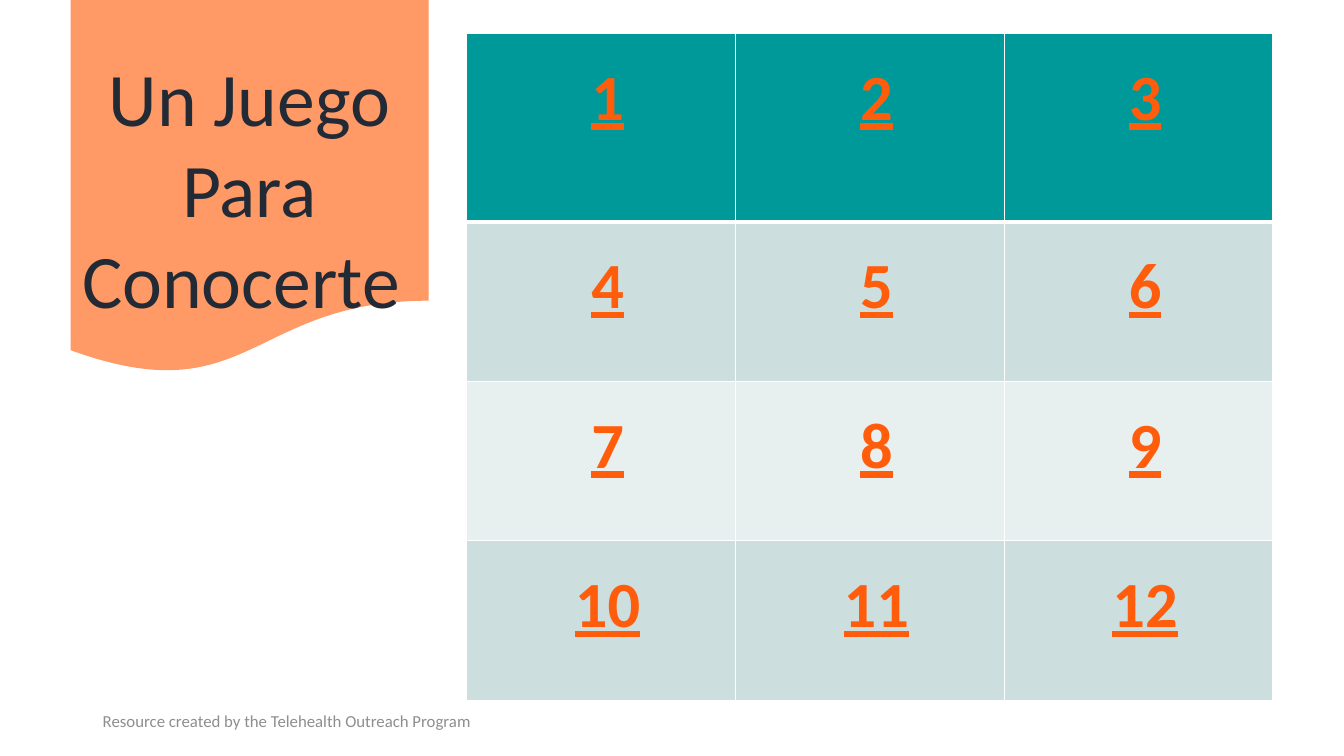
from lxml.etree import SubElement
from pptx import Presentation
from pptx.dml.color import RGBColor
from pptx.enum.shapes import MSO_SHAPE
from pptx.enum.text import MSO_ANCHOR, PP_ALIGN
from pptx.oxml.ns import qn
from pptx.util import Cm, Pt

FONT = "Calibri"
ORANGE, LINK_ORANGE, TEAL = "FF9966", "FF5D0C", "009999"
BAND_DARK, BAND_LIGHT = "CCDEDE", "E7EFEF"
NAVY, GRAY, WHITE = "222A35", "8D8E90", "FFFFFF"
COLUMNS, ROWS = 3, 4
HEADER_HEIGHT = 4.75


def color(hex_string):
    return RGBColor.from_string(hex_string)


def add_run(paragraph, text, size, hex_string, emphasized=False):
    run = paragraph.add_run()
    run.text = text
    run.font.name = FONT
    run.font.size = Pt(size)
    run.font.color.rgb = color(hex_string)
    run.font.bold = run.font.underline = emphasized


def add_text(slide, left, top, width, height, text, size, hex_string, alignment):
    box = slide.shapes.add_textbox(Cm(left), Cm(top), Cm(width), Cm(height))
    frame = box.text_frame
    frame.word_wrap = True
    frame.vertical_anchor = MSO_ANCHOR.MIDDLE
    paragraph = frame.paragraphs[0]
    paragraph.alignment = alignment
    add_run(paragraph, text, size, hex_string)


def add_title_banner(slide, left, top, width, height):
    banner = slide.shapes.add_shape(
        MSO_SHAPE.FLOWCHART_DOCUMENT, Cm(left), Cm(top), Cm(width), Cm(height))
    banner.shadow.inherit = False
    banner.fill.solid()
    banner.fill.fore_color.rgb = color(ORANGE)
    banner.line.fill.background()
    add_text(slide, left, top + 0.69, width, height - 1.4,
             "Un Juego Para Conocerte ", 54, NAVY, PP_ALIGN.CENTER)


def set_borders(cell, row):
    """Draw white cell borders, thicker under the header row."""
    properties = cell._tc.get_or_add_tcPr()
    widths = {"a:lnL": 1, "a:lnR": 1,
              "a:lnT": 3 if row == 1 else 1, "a:lnB": 3 if row == 0 else 1}
    for tag, width in widths.items():
        line = SubElement(properties, qn(tag), w=str(Pt(width)))
        fill = SubElement(line, qn("a:solidFill"))
        SubElement(fill, qn("a:srgbClr"), val=WHITE)


def fill_cell(cell, row, number):
    set_borders(cell, row)
    cell.fill.solid()
    band = BAND_DARK if row % 2 else BAND_LIGHT
    cell.fill.fore_color.rgb = color(TEAL if row == 0 else band)
    cell.margin_left, cell.margin_right = Cm(1.3), Cm(0.97)
    cell.margin_top = cell.margin_bottom = Cm(0.64)
    paragraph = cell.text_frame.paragraphs[0]
    paragraph.alignment = PP_ALIGN.CENTER
    add_run(paragraph, str(number), 46, LINK_ORANGE, emphasized=True)


def add_number_board(slide, left, top, width, height):
    table = slide.shapes.add_table(
        ROWS, COLUMNS, Cm(left), Cm(top), Cm(width), Cm(height)).table
    for column in table.columns:
        column.width = Cm(width / COLUMNS)
    for row, table_row in enumerate(table.rows):
        body_height = (height - HEADER_HEIGHT) / (ROWS - 1)
        table_row.height = Cm(body_height if row else HEADER_HEIGHT)
        for column, cell in enumerate(table_row.cells):
            fill_cell(cell, row, row * COLUMNS + column + 1)


def main():
    presentation = Presentation()
    presentation.slide_width, presentation.slide_height = Cm(33.87), Cm(19.05)
    slide = presentation.slides.add_slide(presentation.slide_layouts[6])
    add_title_banner(slide, 1.78, 0, 9.02, 9.45)
    add_text(slide, 2.34, 17.65, 16.56, 1.02,
             "Resource created by the Telehealth Outreach Program",
             12, GRAY, PP_ALIGN.LEFT)
    add_number_board(slide, 11.76, 0.84, 20.32, 16.81)
    presentation.save("out.pptx")


if __name__ == "__main__":
    main()
